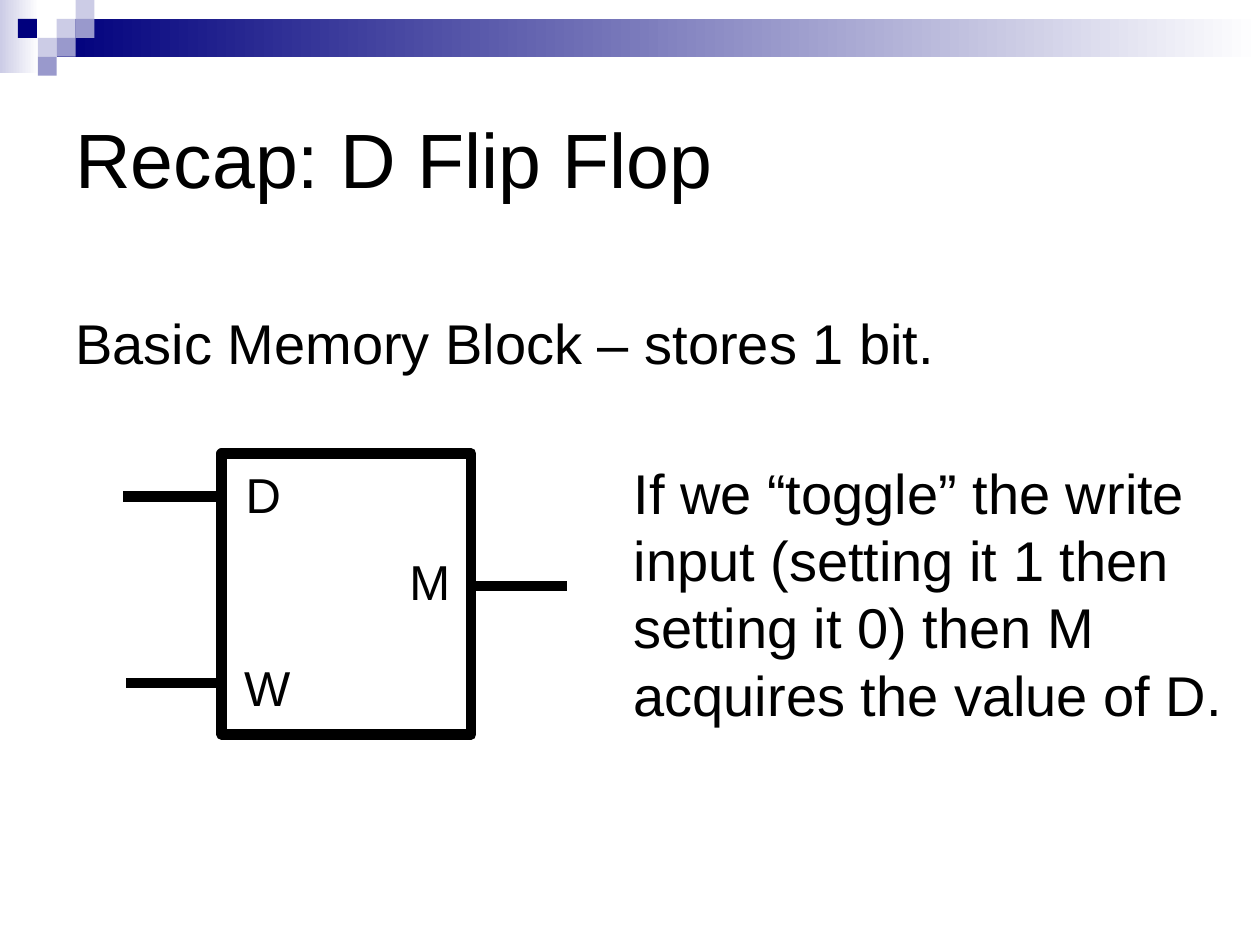
from pptx import Presentation
from pptx.dml.color import RGBColor
from pptx.enum.shapes import MSO_CONNECTOR, MSO_SHAPE
from pptx.enum.text import MSO_ANCHOR
from pptx.util import Inches, Pt
from lxml import etree

RECTANGLE = MSO_SHAPE.RECTANGLE
STRAIGHT = MSO_CONNECTOR.STRAIGHT
TOP, MIDDLE = MSO_ANCHOR.TOP, MSO_ANCHOR.MIDDLE
EFFECTS = "{http://schemas.openxmlformats.org/drawingml/2006/main}effectLst"

NAVY, LAVENDER, PERIWINKLE = "00007D", "CCCCE6", "9999CC"
BLACK, WHITE = "000000", "FFFFFF"
color = RGBColor.from_string

deck = Presentation()
deck.slide_width, deck.slide_height = Inches(10), Inches(7.5)
page = deck.slides.add_slide(deck.slide_layouts[6])


def add_block(left, top, width, height):
    block = page.shapes.add_shape(
        RECTANGLE, Inches(left), Inches(top), Inches(width), Inches(height))
    block.shadow.inherit = False
    block.line.fill.background()
    return block


def add_text(text, left, top, width, height, size, wrap=True, anchor=TOP):
    box = page.shapes.add_textbox(
        Inches(left), Inches(top), Inches(width), Inches(height))
    frame = box.text_frame
    frame.word_wrap = wrap
    frame.vertical_anchor = anchor
    para = frame.paragraphs[0]
    para.text = text
    para.font.name = "Arial"
    para.font.size = Pt(size)
    para.font.color.rgb = color(BLACK)


# Header bands fading to white
for left, top, width, height, start in [
    (0, 0, 0.31, 0.58, LAVENDER),
    (0.45, 0.15, 9.55, 0.3, NAVY),
]:
    band = add_block(left, top, width, height)
    band.fill.gradient()
    band.fill.gradient_angle = 0
    for stop, shade, position in zip(band.fill.gradient_stops, (start, WHITE), (0, 1)):
        stop.color.rgb = color(shade)
        stop.position = position

# Header mosaic on a square grid: column, row, colour
CELL = 0.15
for column, row, shade in [
    (3, 1, LAVENDER), (4, 0, LAVENDER), (4, 1, PERIWINKLE), (2, 2, LAVENDER),
    (0.95, 1, NAVY), (3, 2, PERIWINKLE), (2, 3, PERIWINKLE),
]:
    tile = add_block(column * CELL, row * CELL, CELL, CELL)
    tile.fill.solid()
    tile.fill.fore_color.rgb = color(shade)

# Title and lead sentence
add_text("Recap: D Flip Flop", 0.5, 0.5, 9, 1.5, 44, anchor=MIDDLE)
add_text("Basic Memory Block – stores 1 bit.", 0.5, 2.4, 9, 0.83, 32)

# Flip flop body
flip_flop = add_block(1.76, 3.6, 1.98, 2.23)
flip_flop.fill.background()
flip_flop.line.color.rgb = color(BLACK)
flip_flop.line.width = Pt(6)

# Pins, each with its wire start, wire height and label box
WIRE = 0.74
for name, wire_left, wire_y, left, top, width in [
    ("D", 0.98, 3.94, 1.85, 3.64, 0.48),
    ("W", 1, 5.42, 1.84, 5.17, 0.57),
    ("M", 3.76, 4.65, 3.15, 4.33, 0.53),
]:
    wire = page.shapes.add_connector(
        STRAIGHT, Inches(wire_left), Inches(wire_y),
        Inches(wire_left + WIRE), Inches(wire_y))
    wire.line.color.rgb = color(BLACK)
    wire.line.width = Pt(6)
    etree.SubElement(wire.element.spPr, EFFECTS)
    add_text(name, left, top, width, 0.57, 28, wrap=False)

# Explanation
add_text("If we “toggle” the write input (setting it 1 then setting it 0) "
         "then M acquires the value of D.", 4.93, 3.59, 5.02, 2.23, 32)

deck.save("out.pptx")
